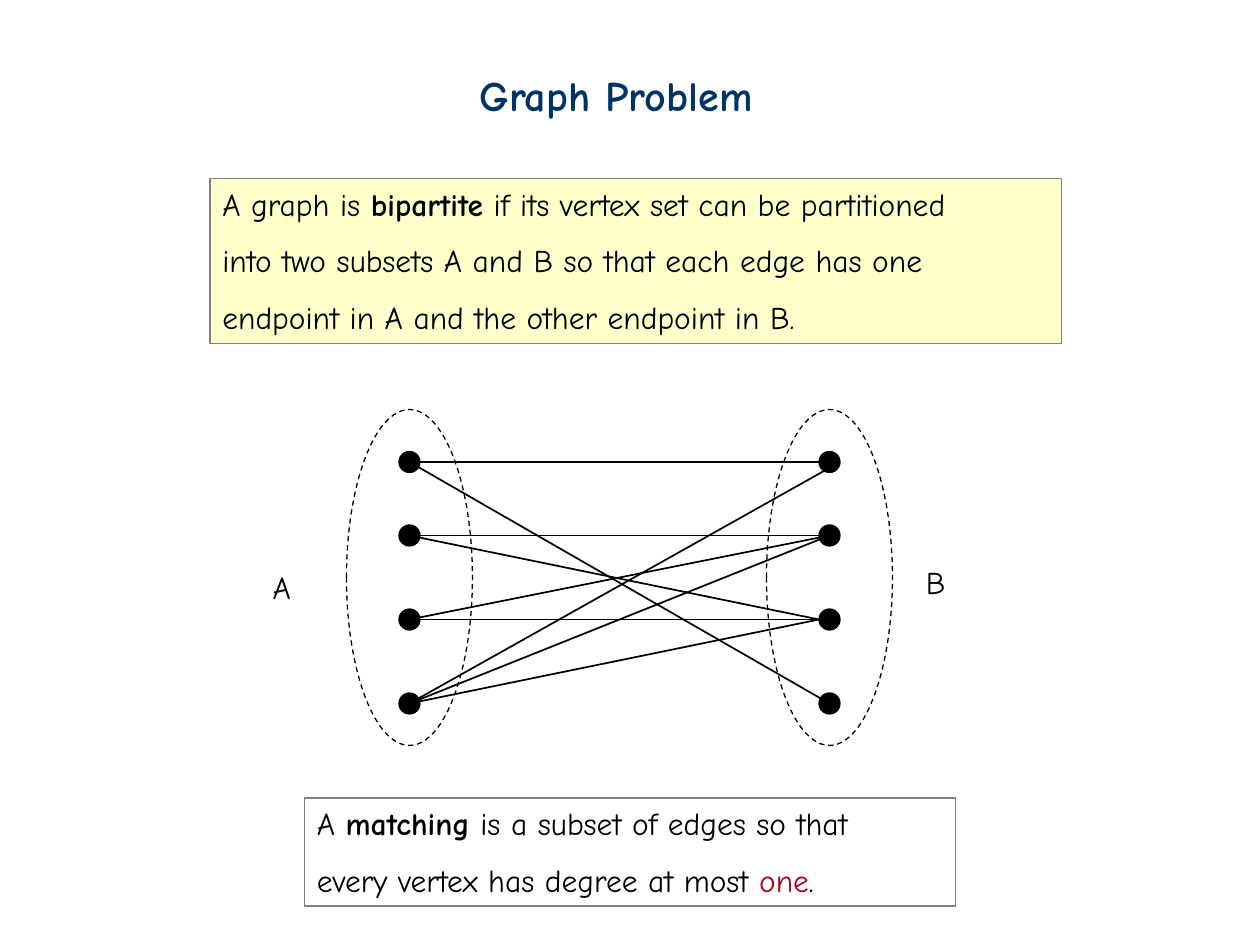
"""Build a slide on bipartite graphs and matchings."""
from typing import NamedTuple, Optional

import pptx
import pptx.dml.color
import pptx.enum.dml
import pptx.enum.shapes
import pptx.enum.text
import pptx.oxml.ns
import pptx.util
from lxml import etree

RGB = pptx.dml.color.RGBColor
BLACK = RGB(0x00, 0x00, 0x00)
NAVY = RGB(0x00, 0x33, 0x66)
GRAY = RGB(0x80, 0x80, 0x80)
CREAM = RGB(0xFF, 0xFF, 0xCC)
RED = RGB(0xA5, 0x00, 0x21)
FONT = "Comic Neue"
KIND = pptx.enum.shapes.MSO_SHAPE

CELL = pptx.util.Inches(1) / 12
COLS, ROWS = 120, 90
LEFT, RIGHT = 39, 79
LEVELS = (44, 51, 59, 67)
ENDS = (80, 79, 78, 79)
EDGES = ((0, 0), (0, 3), (3, 0), (1, 1), (2, 1), (3, 1), (1, 2), (2, 2), (3, 2))


class Area(NamedTuple):
    """A rectangle in grid columns and rows."""
    col: float
    row: float
    wide: float
    high: float


class Span(NamedTuple):
    """A piece of text with one look."""
    text: str
    bold: bool = False
    color: RGB = BLACK


class Note(NamedTuple):
    """A block of text lines, framed or bare."""
    area: Area
    lines: tuple
    size: int = 18
    edge: Optional[RGB] = None
    fill: Optional[RGB] = None


TITLE = Note(Area(44.5, 6, 30.5, 6), ((Span("Graph Problem", True, NAVY),),), 24)
NOTES = (
    Note(Area(20, 17, 81.1, 15.75), (
        (Span("A graph is "), Span("bipartite", True),
         Span(" if its vertex set can be partitioned")),
        (Span("into two subsets A and B so that each edge has one"),),
        (Span("endpoint in A and the other endpoint in B."),),
    ), edge=GRAY, fill=CREAM),
    Note(Area(29, 76, 62, 10.3), (
        (Span("A "), Span("matching", True), Span(" is a subset of edges so that")),
        (Span("every vertex has degree at most "), Span("one", color=RED), Span(".")),
    ), edge=GRAY),
    Note(Area(24.8, 53.5, 4.6, 4.8), ((Span("A"),),)),
    Note(Area(87, 53, 4.4, 4.8), ((Span("B"),),)),
)


def grid(*cells: float) -> list:
    """Turn grid cells into lengths."""
    return [pptx.util.Emu(round(cell * CELL)) for cell in cells]


def draw_shape(slide, kind, area: Area, edge: RGB, fill: Optional[RGB] = None):
    """Draw a preset shape with a thin outline."""
    shape = slide.shapes.add_shape(kind, *grid(*area))
    shape.shadow.inherit = False
    shape.line.color.rgb = edge
    shape.line.width = pptx.util.Pt(0.75)
    if fill is None:
        shape.fill.background()
    else:
        shape.fill.solid()
        shape.fill.fore_color.rgb = fill
    return shape


def draw_note(slide, note: Note) -> None:
    """Draw a note and style its spans."""
    if note.edge is None:
        shape = slide.shapes.add_textbox(*grid(*note.area))
    else:
        shape = draw_shape(slide, KIND.RECTANGLE, note.area, note.edge, note.fill)
    frame = shape.text_frame
    frame.word_wrap = True
    frame.vertical_anchor = pptx.enum.text.MSO_ANCHOR.TOP
    frame.text = "\n".join("" for _ in note.lines)
    for index, (para, line) in enumerate(zip(frame.paragraphs, note.lines)):
        para.alignment = pptx.enum.text.PP_ALIGN.LEFT
        if index:
            para.line_spacing = 1.5
        for span in line:
            run = para.add_run()
            run.text = span.text
            run.font.name = FONT
            run.font.size = pptx.util.Pt(note.size)
            run.font.bold = span.bold
            run.font.color.rgb = span.color


def draw_edge(slide, start: int, end: int) -> None:
    """Join a vertex of A to a vertex of B."""
    line = slide.shapes.add_connector(
        pptx.enum.shapes.MSO_CONNECTOR.STRAIGHT,
        *grid(LEFT, LEVELS[start], ENDS[end], LEVELS[end]))
    line.line.color.rgb = BLACK
    line.line.width = pptx.util.Pt(1)
    etree.SubElement(line._element.spPr, pptx.oxml.ns.qn("a:effectLst"))


def draw_side(slide, col: int) -> None:
    """Draw one vertex set and its dashed oval."""
    for row in LEVELS:
        draw_shape(slide, KIND.OVAL, Area(col - 1, row - 1, 2, 2), BLACK, BLACK)
    oval = draw_shape(slide, KIND.OVAL, Area(col - 6, 39, 12, 32), BLACK)
    oval.line.dash_style = pptx.enum.dml.MSO_LINE.DASH


def main() -> None:
    """Build and save the slide."""
    deck = pptx.Presentation()
    deck.slide_width, deck.slide_height = grid(COLS, ROWS)
    slide = deck.slides.add_slide(deck.slide_layouts[6])
    draw_note(slide, TITLE)
    for start, end in EDGES:
        draw_edge(slide, start, end)
    for col in (LEFT, RIGHT):
        draw_side(slide, col)
    for note in NOTES:
        draw_note(slide, note)
    deck.save("out.pptx")


if __name__ == "__main__":
    main()
